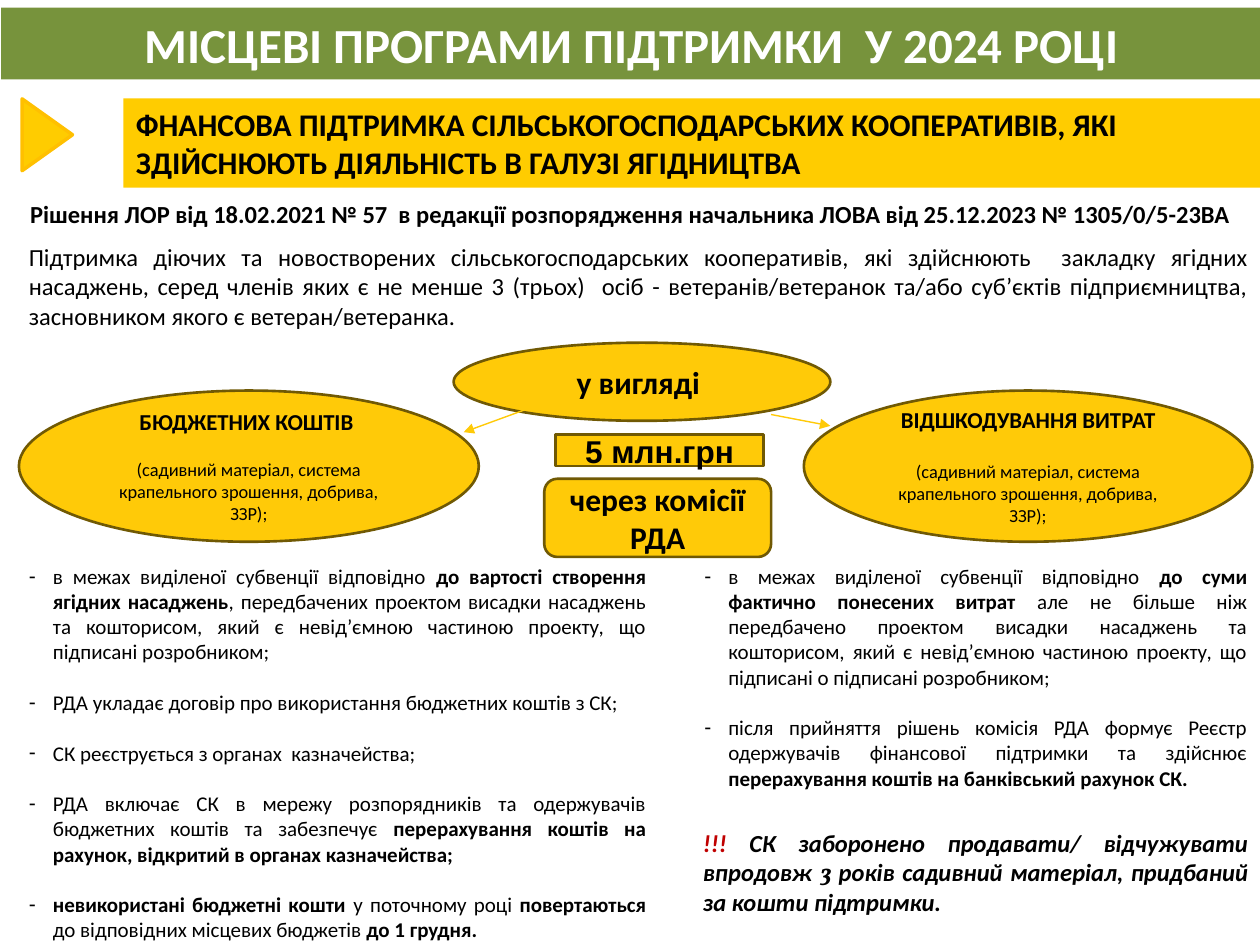
from dataclasses import dataclass

from lxml.etree import SubElement
from pptx import Presentation
from pptx.dml.color import RGBColor
from pptx.enum.shapes import MSO_CONNECTOR, MSO_SHAPE
from pptx.enum.text import MSO_ANCHOR, MSO_AUTO_SIZE, PP_ALIGN
from pptx.oxml.ns import qn
from pptx.util import Inches, Pt

COLORS = {
    "green": "77933C", "yellow": "FFCC00", "amber": "FFC000", "gold": "FFCA08",
    "olive": "705904", "red": "C00000", "black": "000000", "white": "FFFFFF",
}
CELL = Inches(0.1)
COLUMNS, ROWS = 100, 75
FONT = {"name": "Calibri", "bold": False, "italic": False}
FRAME = {"word_wrap": True, "auto_size": MSO_AUTO_SIZE.NONE}
CENTER = {"alignment": PP_ALIGN.CENTER}
JUSTIFY = {"alignment": PP_ALIGN.JUSTIFY}
MATERIALS = "(садивний матеріал, система крапельного зрошення, добрива, ЗЗР);"

BUDGET_TERMS = [
    "в межах виділеної субвенції відповідно *до вартості створення ягідних насаджень*, "
    "передбачених проектом висадки насаджень та кошторисом, який є невід’ємною частиною "
    "проекту, що підписані розробником;",
    "РДА укладає договір про використання бюджетних коштів з СК;",
    "СК реєструється з органах  казначейства;",
    "РДА включає СК в мережу розпорядників та одержувачів бюджетних коштів та забезпечує "
    "*перерахування коштів на рахунок, відкритий в органах казначейства;*",
    "*невикористані бюджетні кошти *у поточному році *повертаються *"
    "до відповідних місцевих бюджетів *до 1 грудня.*",
]
REFUND_TERMS = [
    "в межах виділеної субвенції відповідно *до суми фактично понесених витрат* але не "
    "більше ніж передбачено проектом висадки насаджень та кошторисом, який є невід’ємною "
    "частиною проекту, що підписані о підписані розробником; ",
    "після прийняття рішень комісія РДА формує Реєстр одержувачів фінансової підтримки "
    "та здійснює *перерахування коштів на банківський рахунок СК.*",
]


@dataclass
class Box:
    """A region in grid cells."""
    left: float
    top: float
    width: float
    height: float

    def inner(self, left, top, width, height):
        """Return a box placed relative to this one."""
        return Box(self.left + left, self.top + top, width, height)

    def point(self, left, top):
        """Return a point of this box in slide units."""
        return int((self.left + left) * CELL), int((self.top + top) * CELL)

    def place(self):
        """Return left, top, width and height in slide units."""
        return [int(cells * CELL) for cells in (self.left, self.top, self.width, self.height)]


def apply(target, formats):
    """Set every format value on the target."""
    for key, value in formats.items():
        setattr(target, key, value)


def paint(fill, color):
    """Give a fill one solid colour."""
    fill.solid()
    fill.fore_color.rgb = RGBColor.from_string(COLORS[color])


def add_runs(paragraph, runs, layout=JUSTIFY, size=14, color="black", **font):
    """Write runs of text with their own font changes."""
    apply(paragraph, {"space_before": Pt(0), **layout})
    for text, changes in runs:
        run = paragraph.add_run()
        run.text = text
        values = {"color": color, **FONT, "size": Pt(size), **font, **changes}
        run.font.color.rgb = RGBColor.from_string(COLORS[values.pop("color")])
        apply(run.font, values)


def add_block(slide, box, kind, fill, border=None, width=1.5):
    """Draw a preset shape with a fill and an optional border."""
    block = slide.shapes.add_shape(kind, *box.place())
    block.shadow.inherit = False
    paint(block.fill, fill)
    if border:
        paint(block.line.fill, border)
        block.line.width = Pt(width)
    else:
        block.line.fill.background()
    apply(block.text_frame, {"word_wrap": True, "vertical_anchor": MSO_ANCHOR.MIDDLE})
    return block


def add_text(slide, box, runs, **style):
    """Place one wrapped paragraph."""
    frame = slide.shapes.add_textbox(*box.place()).text_frame
    apply(frame, FRAME)
    add_runs(frame.paragraphs[0], runs, **style)


def add_arrow(slide, start, end):
    """Draw a thin arrow between two points."""
    arrow = slide.shapes.add_connector(MSO_CONNECTOR.STRAIGHT, *start, *end)
    paint(arrow.line.fill, "gold")
    arrow.line.width = Pt(0.79)
    SubElement(arrow.line._get_or_add_ln(), qn("a:tailEnd"), type="triangle")
    SubElement(arrow._element.spPr, qn("a:effectLst"))


def build_heading(title, box):
    """Turn the title into a coloured band."""
    apply(title, dict(zip(("left", "top", "width", "height"), box.place())))
    paint(title.fill, "green")
    apply(title.text_frame, {**FRAME, "vertical_anchor": MSO_ANCHOR.MIDDLE})
    add_runs(title.text_frame.paragraphs[0], [("МІСЦЕВІ ПРОГРАМИ ПІДТРИМКИ  У 2024 РОЦІ", {})],
             CENTER, 28, "white", bold=True)


def build_programme(slide, box):
    """Place the marker and the programme name."""
    marker = add_block(slide, box.inner(0, 0.9, 5.7, 4), MSO_SHAPE.ISOSCELES_TRIANGLE,
                       "yellow", "amber", 2)
    marker.rotation = 90
    name = add_block(slide, box.inner(8.9, 0, box.width - 8.9, box.height),
                     MSO_SHAPE.RECTANGLE, "yellow")
    add_runs(name.text_frame.paragraphs[0],
             [("ФНАНСОВА ПІДТРИМКА СІЛЬСЬКОГОСПОДАРСЬКИХ КООПЕРАТИВІВ, ЯКІ "
               "ЗДІЙСНЮЮТЬ ДІЯЛЬНІСТЬ В ГАЛУЗІ ЯГІДНИЦТВА", {})],
             {"alignment": PP_ALIGN.LEFT}, 18, bold=True)


def build_basis(slide, box):
    """Place the decision and its purpose."""
    add_text(slide, box.inner(0.1, 0, 97.5, 3.4),
             [("Рішення ЛОР від 18.02.2021 № 57  в редакції розпорядження начальника "
               "ЛОВА від 25.12.2023 № 1305/0/5-23ВА", {})],
             layout={"alignment": PP_ALIGN.LEFT}, bold=True)
    add_text(slide, box.inner(0, 3.4, box.width, 8.1),
             [("Підтримка діючих та новостворених сільськогосподарських кооперативів, які "
               "здійснюють  закладку ягідних насаджень, серед членів яких є не менше 3 (трьох)  "
               "осіб - ветеранів/ветеранок та/або суб’єктів підприємництва, засновником якого "
               "є ветеран/ветеранка.", {})])


def build_scheme(slide, box):
    """Place the forms of support, the sum and the arrows."""
    forms = [(0, 36.5, "БЮДЖЕТНИХ КОШТІВ ", 12.8), (62.3, 35.6, "ВІДШКОДУВАННЯ ВИТРАТ", 15.8)]
    for left, width, form, gap in forms:
        oval = add_block(slide, box.inner(left, 3.8, width, 12), MSO_SHAPE.OVAL, "gold", "olive")
        add_runs(oval.text_frame.paragraphs[0], [(form, {})], CENTER, 13, bold=True)
        add_runs(oval.text_frame.add_paragraph(), [(MATERIALS, {})],
                 {**CENTER, "space_before": Pt(gap)}, 10.5)
    steps = [
        (MSO_SHAPE.OVAL, (34.5, 0, 29.9, 6.2), "у вигляді ", "Calibri"),
        (MSO_SHAPE.RECTANGLE, (42.6, 7.3, 16.5, 2.5), "5 млн.грн", "Arial"),
        (MSO_SHAPE.ROUNDED_RECTANGLE, (41.7, 10.8, 18, 6.2), "через комісії РДА", "Calibri"),
    ]
    for kind, cells, step, face in steps:
        block = add_block(slide, box.inner(*cells), kind, "gold", "olive")
        add_runs(block.text_frame.paragraphs[0], [(step, {})], CENTER, 18, bold=True, name=face)
    for start, end in [((59.7, 5.7), (64.4, 6.6)), ((40.5, 5.2), (35.3, 7.1))]:
        add_arrow(slide, box.point(*start), box.point(*end))


def build_terms(body, box, terms):
    """Fill a body with dashed terms, bold between asterisks."""
    apply(body, dict(zip(("left", "top", "width", "height"), box.place())))
    frame = body.text_frame
    apply(frame, FRAME)
    for number, term in enumerate(terms):
        paragraph = frame.add_paragraph() if number else frame.paragraphs[0]
        runs = [(text, {"bold": order % 2 == 1})
                for order, text in enumerate(term.split("*")) if text]
        add_runs(paragraph, runs, {**JUSTIFY, "space_before": Pt(14.5 if number else 0)}, 12)
        properties = paragraph._p.get_or_add_pPr()
        properties.set("marL", str(Inches(0.19)))
        properties.set("indent", str(-Inches(0.19)))
        SubElement(properties, qn("a:buChar"), char="-")


def build_warning(slide, box):
    """Place the ban on resale."""
    add_text(slide, box, [
        ("!!!", {"color": "red"}),
        (" СК заборонено продавати/ відчужувати впродовж ", {}),
        ("3 ", {"name": "Vollkorn"}),
        ("років садивний матеріал, придбаний за кошти підтримки.", {}),
    ], bold=True, italic=True)


def main():
    """Build the slide and save it."""
    deck = Presentation()
    apply(deck, {"slide_width": COLUMNS * CELL, "slide_height": ROWS * CELL})
    slide = deck.slides.add_slide(deck.slide_layouts[3])
    title, budget, refund = list(slide.placeholders)[:3]
    build_heading(title, Box(0.1, 0.6, COLUMNS, 5.7))
    build_programme(slide, Box(0.9, 7.8, 99.1, 7.1))
    build_basis(slide, Box(1.3, 15.3, 98.8, 11.5))
    build_scheme(slide, Box(1.5, 27.2, 97.9, 17))
    build_terms(budget, Box(1.3, 44.2, 51, 31.3), BUDGET_TERMS)
    build_terms(refund, Box(54.9, 44.2, 45.1, 19.2), REFUND_TERMS)
    build_warning(slide, Box(54.8, 65.2, 45.3, 10.4))
    deck.save("out.pptx")


if __name__ == "__main__":
    main()
